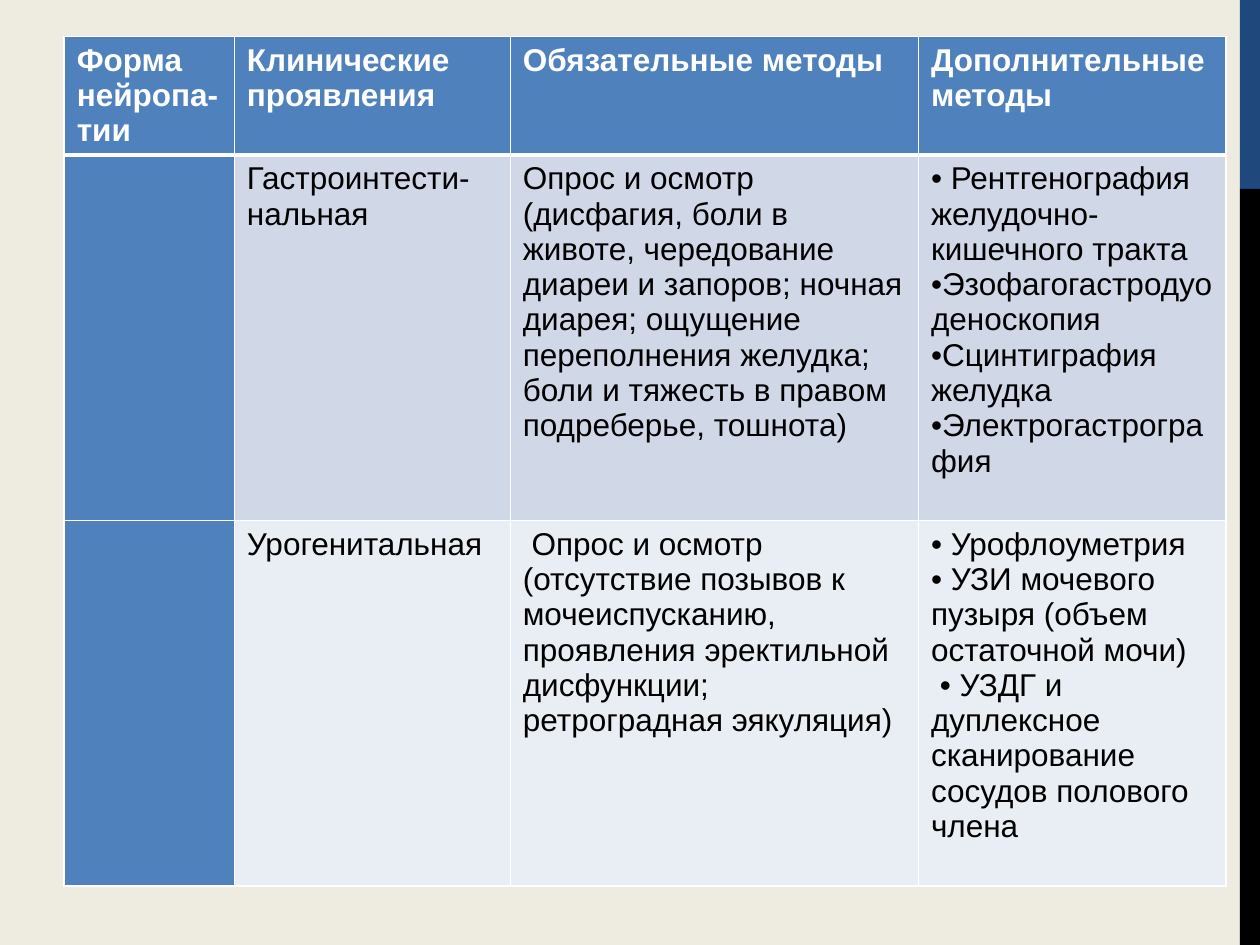
from dataclasses import dataclass

from lxml.etree import SubElement
from pptx import Presentation
from pptx.dml.color import RGBColor
from pptx.enum.shapes import MSO_SHAPE as Shape
from pptx.oxml.ns import qn
from pptx.util import Inches, Pt

WHITE = RGBColor(0xFF, 0xFF, 0xFF)
BLACK = RGBColor(0x00, 0x00, 0x00)
CREAM = RGBColor(0xEE, 0xEC, 0xE1)
NAVY = RGBColor(0x1F, 0x49, 0x7D)
BLUE = RGBColor(0x4F, 0x81, 0xBD)
LIGHT_BLUE = RGBColor(0xD0, 0xD8, 0xE8)
PALE_BLUE = RGBColor(0xE9, 0xED, 0xF4)

SLIDE_WIDTH, SLIDE_HEIGHT = 10, 7.5
BAR_LEFT = 9.84
COLUMN_WIDTHS = (1.35, 2.19, 3.24, 2.44)


@dataclass(frozen=True)
class SideBar:
    top: float
    height: float
    color: RGBColor


@dataclass(frozen=True)
class TableRow:
    height: float
    fill: RGBColor
    texts: tuple[str, ...]


SIDE_BARS = (SideBar(0, 1.5, NAVY), SideBar(1.5, 6, BLACK))

ROWS = (
    TableRow(0.94, BLUE, (
        "Форма нейропа-тии",
        "Клинические проявления",
        "Обязательные методы",
        "Дополнительные методы",
    )),
    TableRow(2.9, LIGHT_BLUE, (
        "",
        "Гастроинтести-\nнальная",
        "Опрос и осмотр (дисфагия, боли в животе, чередование диареи и запоров; "
        "ночная диарея; ощущение переполнения желудка; боли и тяжесть в правом "
        "подреберье, тошнота)",
        "• Рентгенография желудочно-кишечного тракта\n"
        "•Эзофагогастродуо деноскопия •Сцинтиграфия желудка •Электрогастрография",
    )),
    TableRow(2.9, PALE_BLUE, (
        "",
        "Урогенитальная",
        " Опрос и осмотр (отсутствие позывов к мочеиспусканию, проявления "
        "эректильной дисфункции; ретроградная эякуляция)",
        "• Урофлоуметрия\n"
        "• УЗИ мочевого пузыря (объем остаточной мочи)\n"
        " • УЗДГ и дуплексное сканирование сосудов полового члена",
    )),
)


def write_text(text_frame, text: str, *, color: RGBColor, bold: bool = False,
               size: float = 18, font_name: str = "Arial") -> None:
    text_frame.text = text
    for paragraph in text_frame.paragraphs:
        font = paragraph.font
        for run in paragraph.runs:
            font = run.font
        font.name = font_name
        font.size = Pt(size)
        font.bold = bold
        font.color.rgb = color


def set_borders(cell, color: RGBColor, **widths: float) -> None:
    properties = cell._tc.get_or_add_tcPr()
    for side, width in widths.items():
        line = SubElement(properties, qn(f"a:ln{side}"), w=str(Pt(width)))
        fill = SubElement(line, qn("a:solidFill"))
        SubElement(fill, qn("a:srgbClr"), val=str(color))


def draw_side_bar(slide, bar: SideBar) -> None:
    shape = slide.shapes.add_shape(
        Shape.RECTANGLE, Inches(BAR_LEFT), Inches(bar.top),
        Inches(SLIDE_WIDTH - BAR_LEFT), Inches(bar.height))
    shape.shadow.inherit = False
    shape.fill.solid()
    shape.fill.fore_color.rgb = bar.color
    shape.line.fill.background()


def draw_table(slide, rows: tuple[TableRow, ...], left: float, top: float) -> None:
    table = slide.shapes.add_table(
        len(rows), len(COLUMN_WIDTHS), Inches(left), Inches(top),
        Inches(sum(COLUMN_WIDTHS)), Inches(sum(row.height for row in rows))).table
    table.first_row = True
    table.first_col = True
    table.horz_banding = False
    for column, width in zip(table.columns, COLUMN_WIDTHS):
        column.width = Inches(width)
    for row_index, row in enumerate(rows):
        table.rows[row_index].height = Inches(row.height)
        is_header = row_index == 0
        for column_index, text in enumerate(row.texts):
            cell = table.cell(row_index, column_index)
            set_borders(cell, WHITE, L=1, R=1, T=3 if row_index == 1 else 1,
                        B=3 if is_header else 1)
            cell.fill.solid()
            cell.fill.fore_color.rgb = BLUE if column_index == 0 else row.fill
            write_text(cell.text_frame, text, bold=is_header,
                       color=WHITE if is_header else BLACK)


def main() -> None:
    presentation = Presentation()
    presentation.slide_width = Inches(SLIDE_WIDTH)
    presentation.slide_height = Inches(SLIDE_HEIGHT)
    slide = presentation.slides.add_slide(presentation.slide_layouts[6])
    slide.background.fill.solid()
    slide.background.fill.fore_color.rgb = CREAM
    for bar in SIDE_BARS:
        draw_side_bar(slide, bar)
    draw_table(slide, ROWS, left=0.51, top=0.29)
    presentation.save("out.pptx")


if __name__ == "__main__":
    main()
